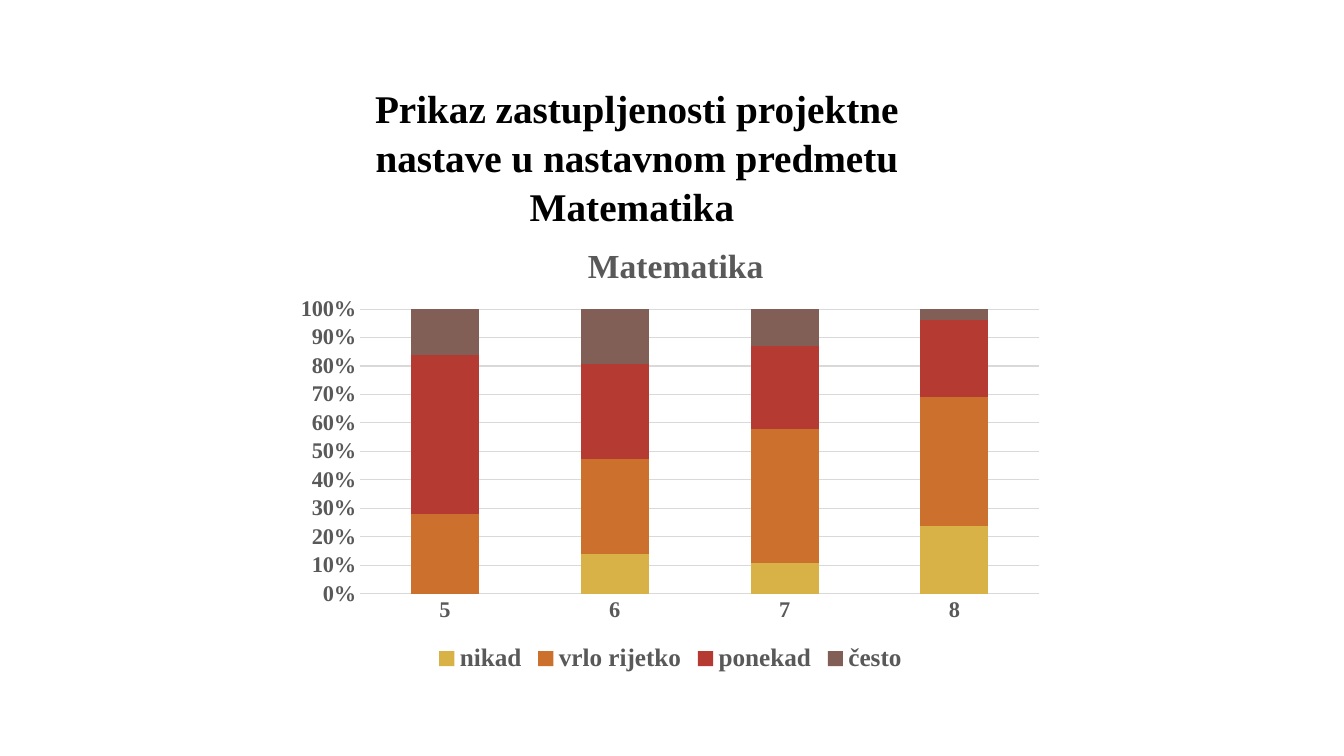
from lxml import etree
from pptx import Presentation
from pptx.chart.data import CategoryChartData
from pptx.dml.color import RGBColor
from pptx.enum.chart import XL_CHART_TYPE, XL_LEGEND_POSITION, XL_TICK_MARK
from pptx.enum.text import MSO_ANCHOR, MSO_AUTO_SIZE, PP_ALIGN
from pptx.oxml import parse_xml
from pptx.oxml.ns import nsdecls, qn
from pptx.util import Inches, Pt

STACKED = XL_CHART_TYPE.COLUMN_STACKED_100
BOTTOM = XL_LEGEND_POSITION.BOTTOM
NO_TICK = XL_TICK_MARK.NONE
TOP = MSO_ANCHOR.TOP
FIXED = MSO_AUTO_SIZE.NONE
CENTER = PP_ALIGN.CENTER

WIDTH, HEIGHT = Inches(13.33), Inches(7.5)
FONT = "Times New Roman"
COLORS = {
    "black": "000000", "gray": "595959", "rule": "D9D9D9",
    "nikad": "D9B247", "vrlo rijetko": "CC702D",
    "ponekad": "B53A31", "često": "815F56",
}
GRADES = ["5", "6", "7", "8"]
SHARES = {
    "nikad": (0, 14, 11, 24),
    "vrlo rijetko": (28, 33, 47, 45),
    "ponekad": (56, 33, 29, 27),
    "često": (16, 19, 13, 4),
}


class Deck:
    """Holds the style and the current slide; boxes are percents of the slide."""

    def __init__(self):
        self.show = Presentation()
        self.show.slide_width, self.show.slide_height = WIDTH, HEIGHT
        self.slide = self.show.slides.add_slide(self.show.slide_layouts[5])

    def place(self, x, y, w, h):
        return [int(share * size / 100) for share, size in
                zip((x, y, w, h), (WIDTH, HEIGHT, WIDTH, HEIGHT))]

    def color(self, name):
        return RGBColor.from_string(COLORS[name])

    def style(self, font, size, color="gray"):
        font.name, font.size, font.bold = FONT, Pt(size), True
        font.color.rgb = self.color(color)

    def rule(self, line):
        line.color.rgb = self.color("rule")
        line.width = Pt(0.75)

    def title(self, text, box):
        shape = self.slide.shapes.title
        shape.left, shape.top, shape.width, shape.height = self.place(*box)
        frame = shape.text_frame
        frame.text = text
        frame.word_wrap, frame.auto_size = True, FIXED
        frame.vertical_anchor = TOP
        frame.margin_left = frame.margin_right = Inches(0.3)
        para = frame.paragraphs[0]
        para.alignment, para.line_spacing = CENTER, 1.04
        self.style(para.runs[0].font, 28, "black")

    def pin(self, part, spot, **shares):
        """Fix a chart part at shares of the chart's size."""
        for old in part.findall(qn("c:layout")):
            part.remove(old)
        layout = parse_xml(f"<c:layout {nsdecls('c')}><c:manualLayout/></c:layout>")
        vals = {"xMode": "edge", "yMode": "edge", **shares}
        if "w" in shares:
            vals = {"layoutTarget": "inner", **vals}
        for key, val in vals.items():
            etree.SubElement(layout[0], qn(f"c:{key}")).set("val", str(val))
        part.insert(spot, layout)

    def chart(self, head, cats, rows, box):
        data = CategoryChartData(number_format="General")
        data.categories = cats
        for name, vals in rows.items():
            data.add_series(name, vals)
        chart = self.slide.shapes.add_chart(STACKED, *self.place(*box), data).chart
        chart.font.name, chart.font.size = FONT, Pt(10)

        # Columns
        plot = chart.plots[0]
        plot.gap_width, plot.overlap = 150, 100
        plot.vary_by_categories = False
        for series in plot.series:
            series.format.fill.solid()
            series.format.fill.fore_color.rgb = self.color(series.name)

        # Axes
        for axis in (chart.category_axis, chart.value_axis):
            axis.major_tick_mark = axis.minor_tick_mark = NO_TICK
            self.style(axis.tick_labels.font, 16)
        self.rule(chart.category_axis.format.line)
        scale = chart.value_axis
        scale.format.line.fill.background()
        scale.minimum_scale, scale.maximum_scale, scale.major_unit = 0, 1, 0.1
        scale.tick_labels.number_format = "0%"
        scale.tick_labels.number_format_is_linked = False
        self.rule(scale.major_gridlines.format.line)

        # Heading and legend
        chart.has_title = True
        frame = chart.chart_title.text_frame
        frame.text = head
        self.style(frame.paragraphs[0].runs[0].font, 24)
        chart.chart_title.include_in_layout = False
        chart.has_legend = True
        chart.legend.position = BOTTOM
        chart.legend.include_in_layout = False
        self.style(chart.legend.font, 18)

        # Fixed places inside the chart
        root = chart._chartSpace
        self.pin(root.find(".//" + qn("c:title")), 1, x=0.385, y=0.05)
        self.pin(root.find(".//" + qn("c:plotArea")), 0,
                 x=0.097, y=0.204, w=0.882, h=0.616)


def main():
    deck = Deck()
    deck.title("Prikaz zastupljenosti projektne nastave u nastavnom "
               "predmetu Matematika ", (22.36, 10.27, 50.04, 13.87))
    deck.chart("Matematika", GRADES, SHARES, (21.23, 28.4, 57.31, 61.2))
    deck.show.save("out.pptx")


if __name__ == "__main__":
    main()
